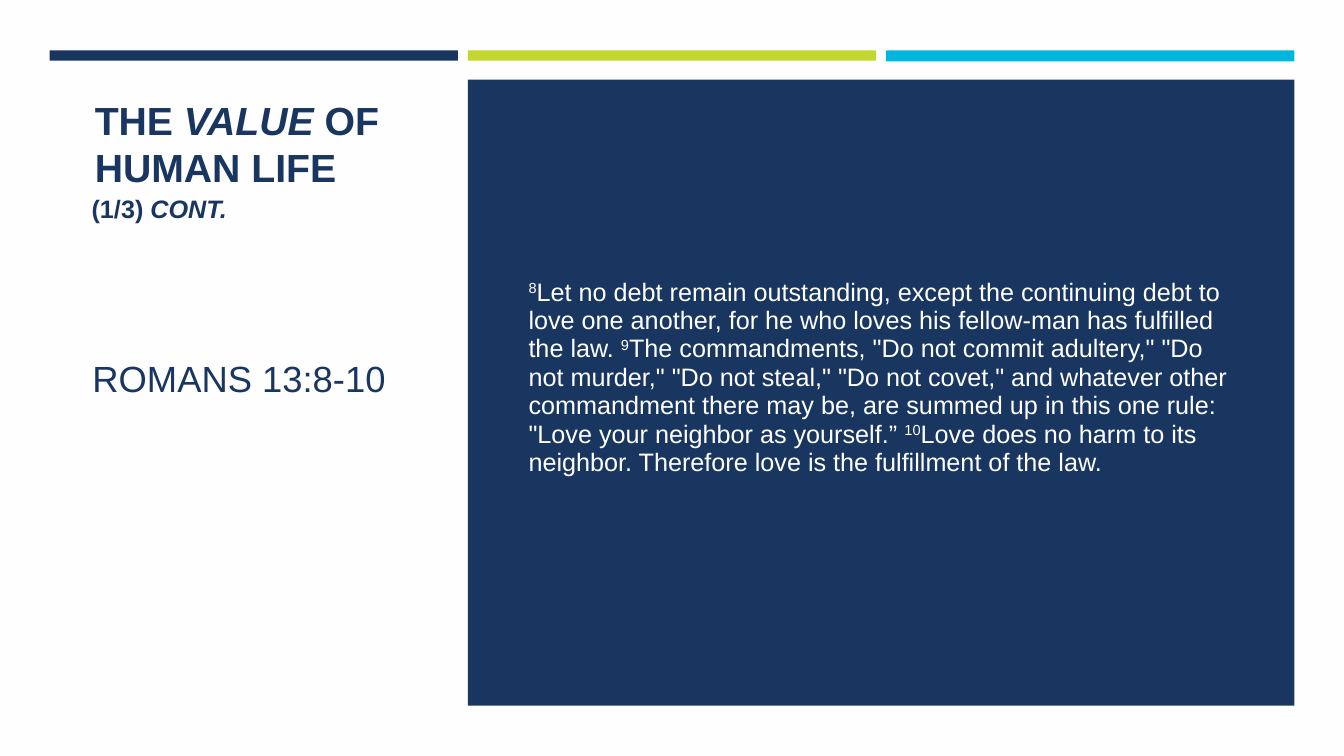
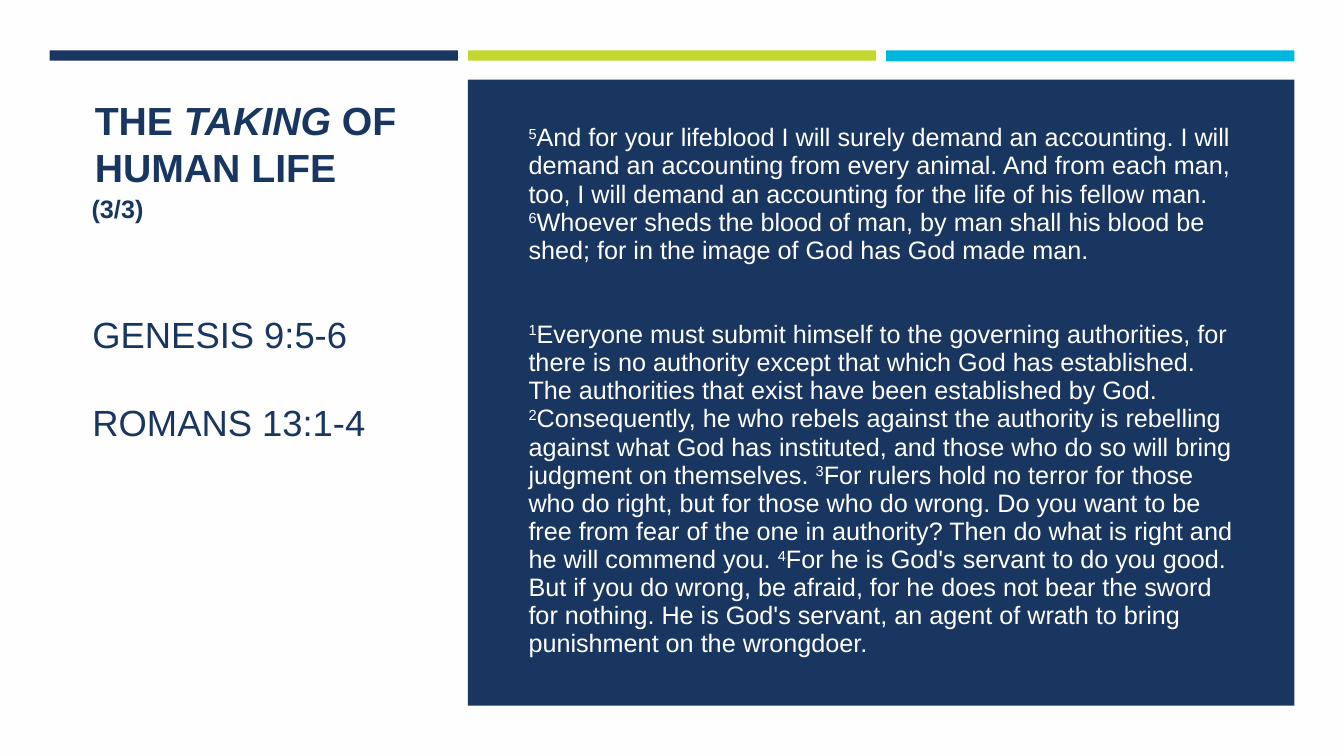
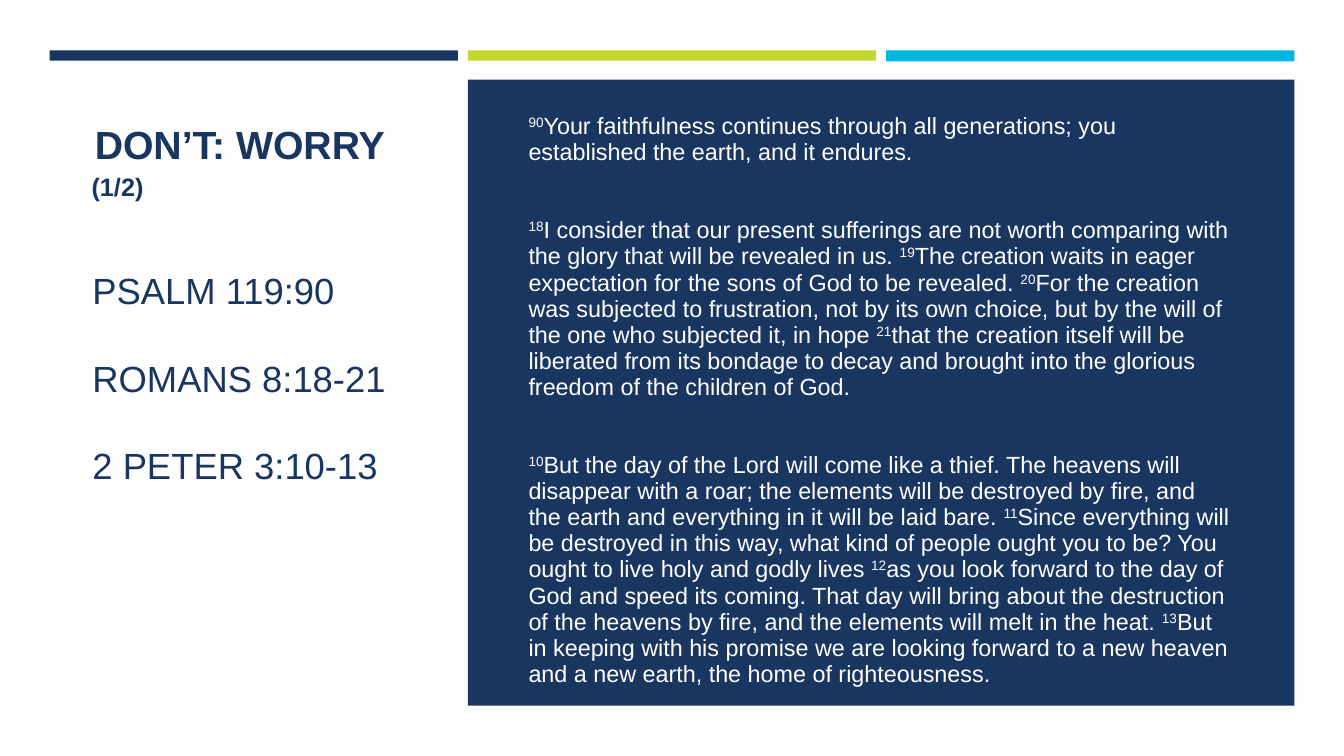
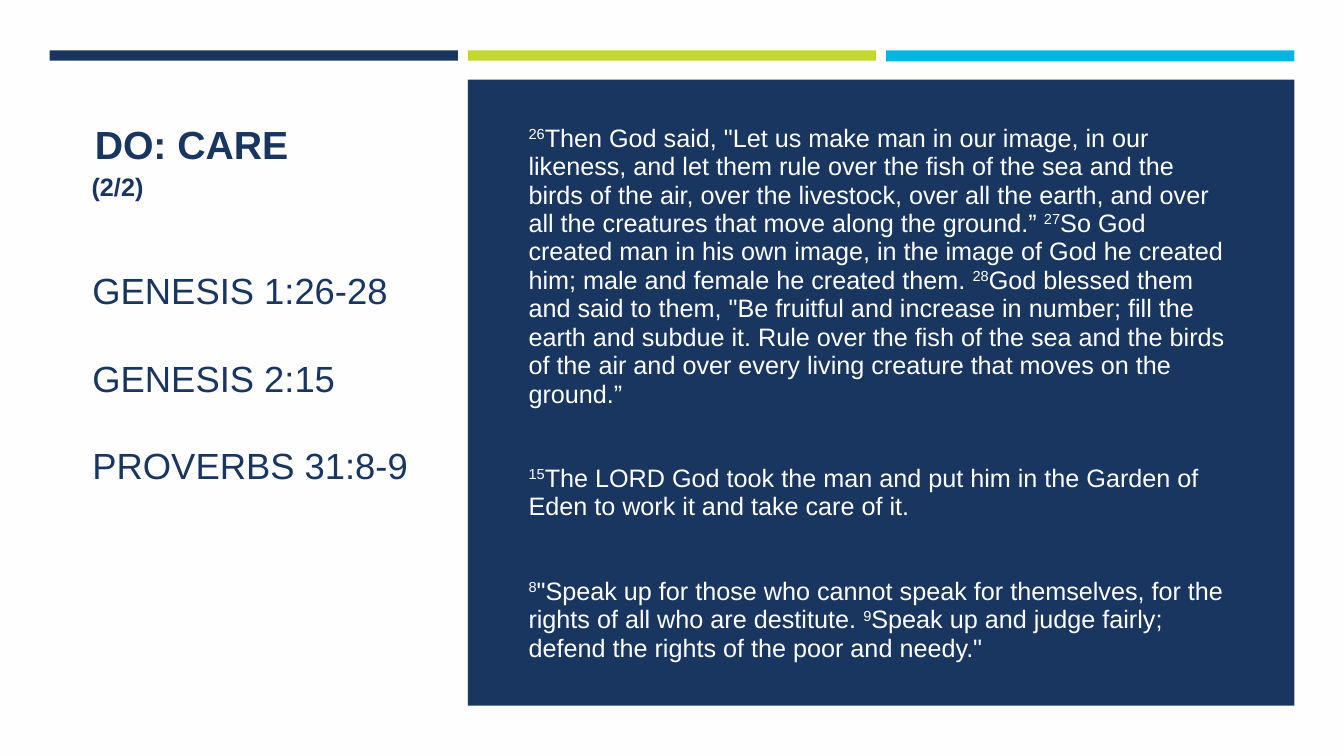
import pptx
import pptx.dml.color
import pptx.enum.shapes
import pptx.enum.text
import pptx.util

Cm = pptx.util.Cm
Pt = pptx.util.Pt

NAVY, LIME, CYAN = "193661", "C3D82E", "00B6DE"
WHITE, PAPER = "FFFFFF", "FFFEFF"
FONT = "Arial"


def color(code):
    return pptx.dml.color.RGBColor.from_string(code)


class Lesson:
    """Holds the deck, its style and the current page."""

    def __init__(self):
        self.deck = pptx.Presentation()
        self.deck.slide_width, self.deck.slide_height = Cm(33.87), Cm(19.05)
        self.page = None

    def start_page(self):
        """Adds a page with the three bars and the dark panel."""
        self.page = self.deck.slides.add_slide(self.deck.slide_layouts[6])
        backdrop = self.page.background.fill
        backdrop.solid()
        backdrop.fore_color.rgb = color(PAPER)
        for column, (code, height) in enumerate([(NAVY, 0.26), (LIME, 0.26), (CYAN, 0.28)]):
            self.block(1.25 + 10.54 * column, 1.27, 10.29, height, code)
        self.block(11.79, 2.01, 20.83, 15.77, NAVY)

    def block(self, left, top, width, height, code):
        box = self.page.shapes.add_shape(
            pptx.enum.shapes.MSO_SHAPE.RECTANGLE,
            Cm(left), Cm(top), Cm(width), Cm(height))
        box.shadow.inherit = False
        box.fill.solid()
        box.fill.fore_color.rgb = color(code)
        box.line.fill.background()

    def text(self, place, paragraphs, size, code=NAVY, bold=False, gap=0, spacing=None):
        """Writes paragraphs; *stars* mark italics and ^carets^ mark raised numbers."""
        box = self.page.shapes.add_textbox(*[Cm(length) for length in place])
        frame = box.text_frame
        frame.word_wrap = True
        frame.vertical_anchor = pptx.enum.text.MSO_ANCHOR.MIDDLE
        for index, content in enumerate(paragraphs):
            para = frame.add_paragraph() if index else frame.paragraphs[0]
            layout = {"space_before": Pt(gap if index else 0)}
            if spacing:
                layout = {"line_spacing": spacing, "space_after": Pt(6),
                          "space_before": Pt(gap - 6 if index else size * 0.2)}
            for name, value in layout.items():
                setattr(para, name, value)
            mark = "^" if "^" in content else "*"
            for order, piece in enumerate(content.split(mark)):
                if piece:
                    marked = order % 2 == 1
                    self.span(para, piece, size, code, bold,
                              italic=marked and mark == "*",
                              raised=marked and mark == "^")

    def span(self, para, content, size, code, bold, italic, raised):
        span = para.add_run()
        span.text = content
        look = {"name": FONT, "size": Pt(size), "bold": bold, "italic": italic}
        for name, value in look.items():
            setattr(span.font, name, value)
        span.font.color.rgb = color(code)
        if raised:
            span._r.get_or_add_rPr().set("baseline", "30000")

    def heading(self, title, part, part_height):
        self.text((2.14, 2.22, 8.48, 2.79), [title], 28, bold=True)
        self.text((2.06, 3.86, 10.21, part_height), [part], 18, bold=True)

    def references(self, names):
        self.text((2.08, 2.98, 8.48, 13.08), names, 26, gap=31.2)

    def passages(self, verses, top, height, size=18, gap=40, spacing=0.93):
        self.text((13.07, top, 18.27, height), verses, size, WHITE,
                  gap=gap, spacing=spacing)


PAGES = [
    {
        "heading": ("THE *VALUE* OF HUMAN LIFE", "(1/3) *CONT.*", 2.79),
        "references": ["ROMANS 13:8-10"],
        "layout": {"top": 2.98, "height": 13.08, "spacing": 0.94},
        "verses": [
            "^8^Let no debt remain outstanding, except the continuing debt to love one "
            "another, for he who loves his fellow-man has fulfilled the law. "
            "^9^The commandments, \"Do not commit adultery,\" \"Do not murder,\" \"Do not "
            "steal,\" \"Do not covet,\" and whatever other commandment there may be, are "
            "summed up in this one rule: \"Love your neighbor as yourself.” "
            "^10^Love does no harm to its neighbor. Therefore love is the fulfillment "
            "of the law.",
        ],
    },
    {
        "heading": ("THE *TAKING* OF HUMAN LIFE", "(3/3)", 2.79),
        "references": ["GENESIS 9:5-6", "ROMANS 13:1-4"],
        "layout": {"top": 2.98, "height": 13.77},
        "verses": [
            "^5^And for your lifeblood I will surely demand an accounting. I will demand "
            "an accounting from every animal. And from each man, too, I will demand an "
            "accounting for the life of his fellow man. "
            "^6^Whoever sheds the blood of man, by man shall his blood be shed; for in "
            "the image of God has God made man.",
            "^1^Everyone must submit himself to the governing authorities, for there is "
            "no authority except that which God has established. The authorities that "
            "exist have been established by God. "
            "^2^Consequently, he who rebels against the authority is rebelling against "
            "what God has instituted, and those who do so will bring judgment on "
            "themselves. "
            "^3^For rulers hold no terror for those who do right, but for those who do "
            "wrong. Do you want to be free from fear of the one in authority? Then do "
            "what is right and he will commend you. "
            "^4^For he is God's servant to do you good. But if you do wrong, be afraid, "
            "for he does not bear the sword for nothing. He is God's servant, an agent "
            "of wrath to bring punishment on the wrongdoer.",
        ],
    },
    {
        "heading": ("DON’T: WORRY", "(1/2)", 1.68),
        "references": ["PSALM 119:90", "ROMANS 8:18-21", "2 PETER 3:10-13"],
        "layout": {"top": 2.43, "height": 15.34, "size": 16.7, "gap": 37},
        "verses": [
            "^90^Your faithfulness continues through all generations; you established "
            "the earth, and it endures.",
            "^18^I consider that our present sufferings are not worth comparing with the "
            "glory that will be revealed in us. "
            "^19^The creation waits in eager expectation for the sons of God to be "
            "revealed. "
            "^20^For the creation was subjected to frustration, not by its own choice, "
            "but by the will of the one who subjected it, in hope "
            "^21^that the creation itself will be liberated from its bondage to decay "
            "and brought into the glorious freedom of the children of God.",
            "^10^But the day of the Lord will come like a thief. The heavens will "
            "disappear with a roar; the elements will be destroyed by fire, and the "
            "earth and everything in it will be laid bare. "
            "^11^Since everything will be destroyed in this way, what kind of people "
            "ought you to be? You ought to live holy and godly lives "
            "^12^as you look forward to the day of God and speed its coming. That day "
            "will bring about the destruction of the heavens by fire, and the elements "
            "will melt in the heat. "
            "^13^But in keeping with his promise we are looking forward to a new heaven "
            "and a new earth, the home of righteousness.",
        ],
    },
    {
        "heading": ("DO: CARE", "(2/2)", 1.68),
        "references": ["GENESIS 1:26-28", "GENESIS 2:15", "PROVERBS 31:8-9"],
        "layout": {"top": 2.49, "height": 14.86, "spacing": 0.94},
        "verses": [
            "^26^Then God said, \"Let us make man in our image, in our likeness, and let "
            "them rule over the fish of the sea and the birds of the air, over the "
            "livestock, over all the earth, and over all the creatures that move along "
            "the ground.” "
            "^27^So God created man in his own image, in the image of God he created "
            "him; male and female he created them. "
            "^28^God blessed them and said to them, \"Be fruitful and increase in number; "
            "fill the earth and subdue it. Rule over the fish of the sea and the birds "
            "of the air and over every living creature that moves on the ground.”",
            "^15^The LORD God took the man and put him in the Garden of Eden to work it "
            "and take care of it.",
            "^8^\"Speak up for those who cannot speak for themselves, for the rights of "
            "all who are destitute. "
            "^9^Speak up and judge fairly; defend the rights of the poor and needy.\"",
        ],
    },
]


def main():
    lesson = Lesson()
    for content in PAGES:
        lesson.start_page()
        lesson.references(content["references"])
        lesson.passages(content["verses"], **content["layout"])
        lesson.heading(*content["heading"])
    lesson.deck.save("out.pptx")


if __name__ == "__main__":
    main()
